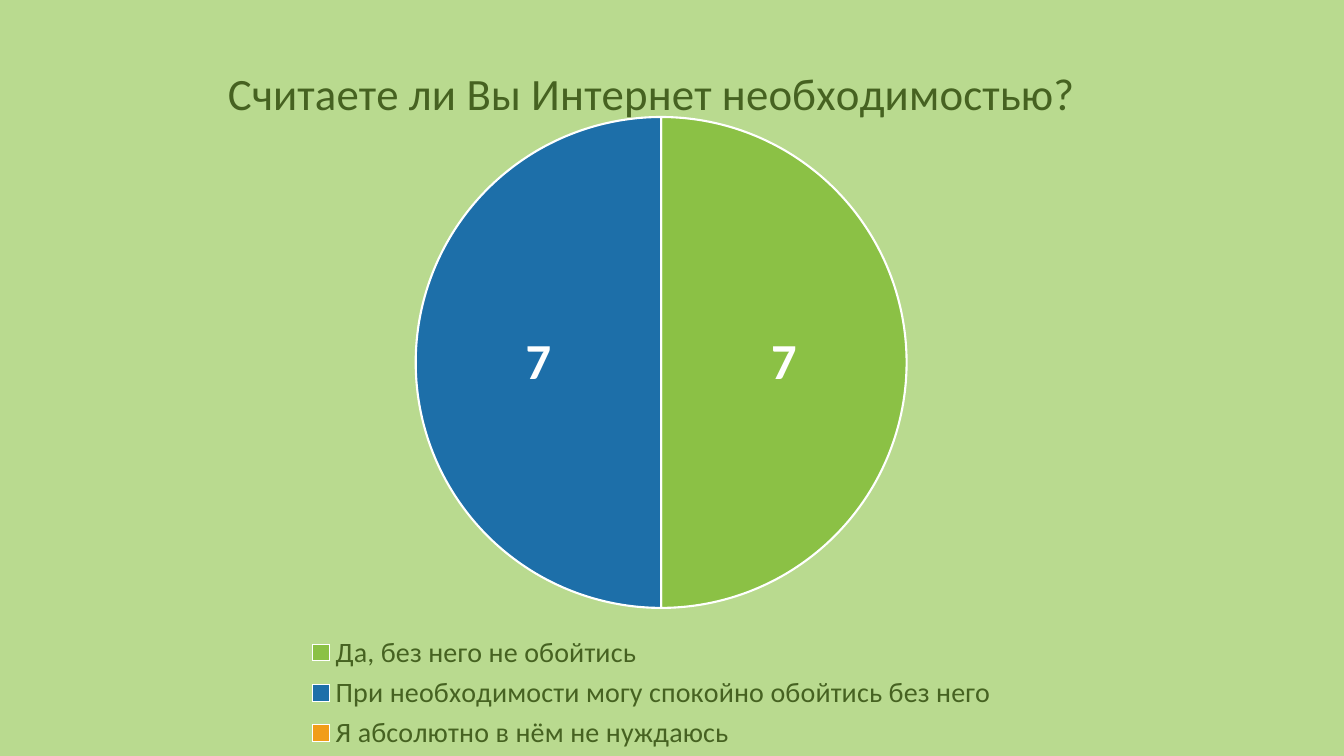
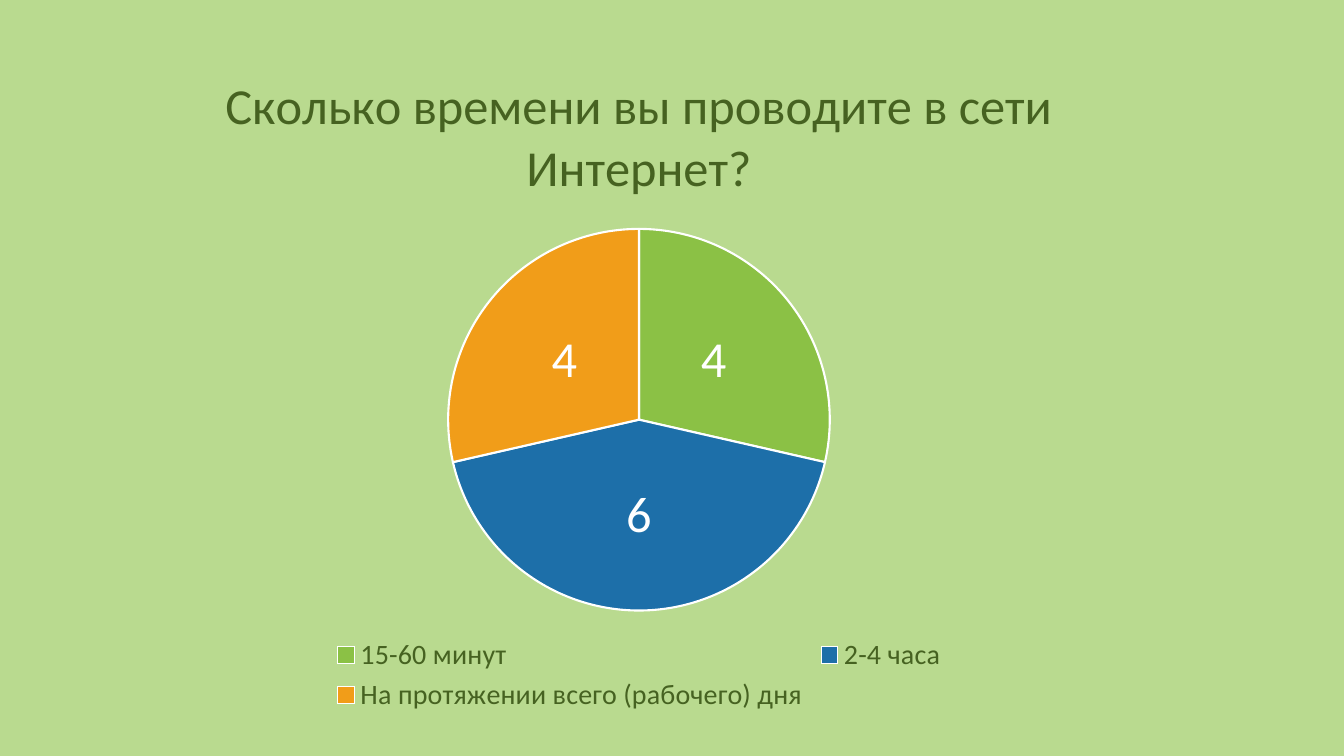
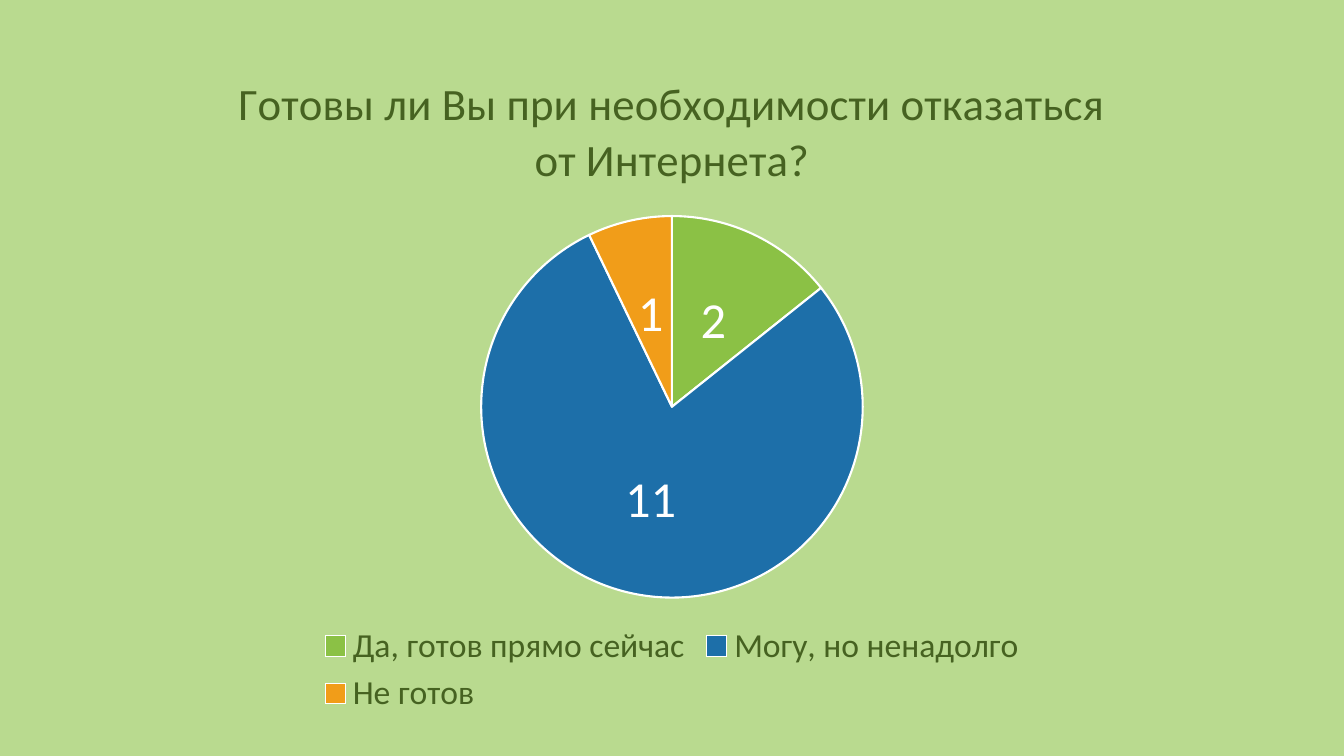
from dataclasses import dataclass

from lxml.etree import SubElement
from pptx import Presentation
from pptx.chart.data import CategoryChartData
from pptx.dml.color import RGBColor
from pptx.enum.chart import XL_CHART_TYPE, XL_LABEL_POSITION, XL_LEGEND_POSITION
from pptx.oxml.ns import qn
from pptx.util import Emu, Pt

SCALE = 914400 / 100.8  # EMU per px


@dataclass(frozen=True)
class Theme:
    font: str = "Calibri"
    back: str = "B9DA8F"
    ink: str = "466221"
    white: str = "FFFFFF"
    fills: tuple = ("8BC145", "1D6FA9", "F19D19")
    base: int = 10
    label: int = 36
    edge: float = 1.5


THEME = Theme()

# One entry per survey question; boxes are left, top, width, height in px
POLLS = [
    dict(title="Считаете ли Вы Интернет необходимостью?",
         box=(39, 34, 1226, 722), size=32, legend=20, bold=True,
         plot=(0.02, 0.115, 0.975, 0.68),
         votes={"Да, без него не обойтись": 7,
                "При необходимости могу спокойно обойтись без него": 7,
                "Я абсолютно в нём не нуждаюсь": 0}),
    dict(title="Сколько времени вы проводите в сети Интернет?",
         box=(102, 42, 1074, 676), size=36, legend=20,
         votes={"15-60 минут": 4,
                "2-4 часа": 6,
                "На протяжении всего (рабочего) дня": 4}),
    dict(title="Готовы ли Вы при необходимости отказаться от Интернета?",
         box=(112, 45, 1120, 676), size=32, legend=24,
         votes={"Да, готов прямо сейчас": 2,
                "Могу, но ненадолго": 11,
                "Не готов": 1}),
]


def px(n):
    return Emu(round(n * SCALE))


def style(font, size, color, bold=False):
    font.name = THEME.font
    font.size = Pt(size)
    font.bold = bold
    font.color.rgb = RGBColor.from_string(color)


def place(chart, plot):
    """Fix the inner plot area at fractions of the chart box."""
    area = chart.plots[0]._element.getparent()
    layout = area.find(qn("c:layout"))
    if layout is None:
        layout = SubElement(area, qn("c:layout"))
        area.insert(0, layout)
    manual = SubElement(layout, qn("c:manualLayout"))
    parts = [("layoutTarget", "inner"), ("xMode", "edge"), ("yMode", "edge")]
    parts += zip("xywh", plot)
    for tag, value in parts:
        SubElement(manual, qn(f"c:{tag}")).set("val", str(value))


def add_pie(slide, title, box, size, legend, votes, bold=False, plot=None):
    data = CategoryChartData()
    data.categories = list(votes)
    data.add_series("Series 1", list(votes.values()))
    frame = slide.shapes.add_chart(XL_CHART_TYPE.PIE, *map(px, box), data)
    chart = frame.chart
    style(chart.font, THEME.base, THEME.white)

    # Title
    chart.has_title = True
    para = chart.chart_title.text_frame.paragraphs[0]
    para.text = title
    style(para.runs[0].font, size, THEME.ink)
    chart.chart_title.include_in_layout = False

    # Legend
    chart.has_legend = True
    chart.legend.position = XL_LEGEND_POSITION.BOTTOM
    chart.legend.include_in_layout = False
    style(chart.legend.font, legend, THEME.ink)

    # Slices
    pie = chart.plots[0]
    pie.vary_by_categories = True
    for i, color in enumerate(THEME.fills):
        form = pie.series[0].points[i].format
        form.fill.solid()
        form.fill.fore_color.rgb = RGBColor.from_string(color)
        form.line.color.rgb = RGBColor.from_string(THEME.white)
        form.line.width = Pt(THEME.edge)

    # Value labels; the number format leaves zero blank
    labels = pie.series[0].data_labels
    labels.show_value = True
    labels.number_format = "0;;;"
    labels.number_format_is_linked = False
    labels.position = XL_LABEL_POSITION.CENTER
    style(labels.font, THEME.label, THEME.white, bold)

    if plot:
        place(chart, plot)


def add_poll(deck, poll):
    slide = deck.slides.add_slide(deck.slide_layouts[6])
    add_pie(slide, **poll)


def main():
    deck = Presentation()
    deck.slide_width, deck.slide_height = px(1344), px(756)
    # Shared background
    fill = deck.slide_master.background.fill
    fill.solid()
    fill.fore_color.rgb = RGBColor.from_string(THEME.back)
    for poll in POLLS:
        add_poll(deck, poll)
    deck.save("out.pptx")


if __name__ == "__main__":
    main()
